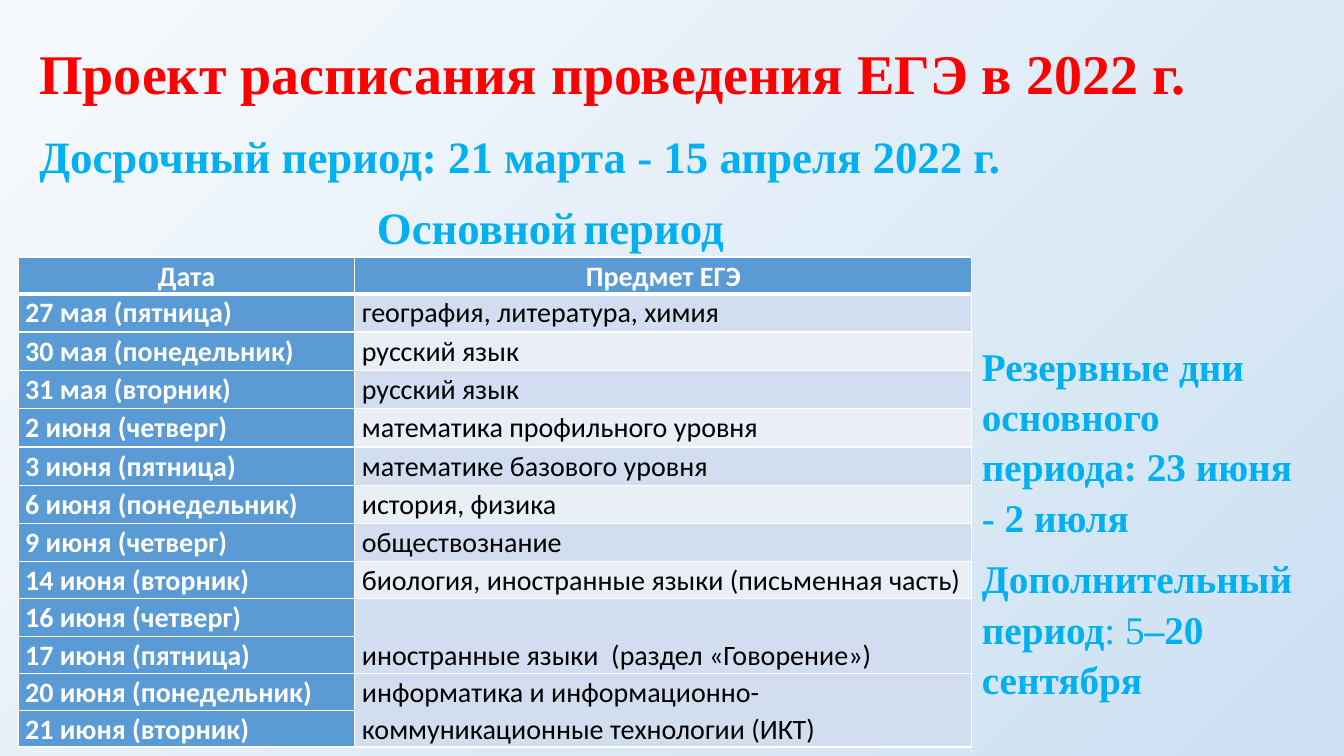
import pptx
import pptx.util
import pptx.dml.color
import pptx.enum.text
import pptx.oxml
import pptx.oxml.ns

Inches, Pt = pptx.util.Inches, pptx.util.Pt
RGB = pptx.dml.color.RGBColor.from_string
ALIGN = pptx.enum.text.PP_ALIGN
ANCHOR = pptx.enum.text.MSO_ANCHOR
SERIF = "Times New Roman"
COLORS = {
    "red": "FF0000", "sky": "00B0F0", "blue": "5B9BD5", "white": "FFFFFF",
    "black": "000000", "band": "D2DEEF", "light": "EAEFF7",
    "top": "F7FAFD", "bottom": "CEE1F2",
}


def write(paragraph, runs, color, layout):
    """Fill a paragraph with (text, size, bold, font) runs and set its layout values."""
    for text, size, bold, font in runs:
        run = paragraph.add_run()
        run.text = text
        for attribute, value in {"size": Pt(size), "bold": bold, "name": font}.items():
            setattr(run.font, attribute, value)
        run.font.color.rgb = RGB(COLORS[color])
    for attribute, value in layout.items():
        setattr(paragraph, attribute, value)


def place(shape, left, top, width, height, anchor=ANCHOR.TOP):
    """Position a text shape and make its text wrap at a fixed size."""
    box = {"left": left, "top": top, "width": width, "height": height}
    for attribute, value in box.items():
        setattr(shape, attribute, Inches(value))
    frame = shape.text_frame
    frame.word_wrap = True
    frame.auto_size = pptx.enum.text.MSO_AUTO_SIZE.NONE
    frame.vertical_anchor = anchor
    return frame


deck = pptx.Presentation()
deck.slide_width, deck.slide_height = Inches(13.33), Inches(7.5)
slide = deck.slides.add_slide(deck.slide_layouts[1])

backdrop = slide.background.fill
backdrop.gradient()
backdrop.gradient_angle = 315
for stop, position, shade in zip(backdrop.gradient_stops, (0, 0.97), ("top", "bottom")):
    stop.position = position
    stop.color.rgb = RGB(COLORS[shade])

# Headings
heading = place(slide.shapes.title, 0.29, 0.21, 11.89, 0.9, ANCHOR.BOTTOM)
write(heading.paragraphs[0], [("Проект расписания проведения ЕГЭ в 2022 г.", 40, True, SERIF)],
      "red", {"alignment": ALIGN.LEFT, "line_spacing": 0.9})

spaced = {"alignment": ALIGN.LEFT, "line_spacing": 1.07, "space_after": Pt(8)}
early_period = place(slide.placeholders[1], 0.29, 1.19, 9.89, 0.94).paragraphs[0]
write(early_period, [("Досрочный период: 21 марта - 15 апреля 2022 г.", 32, True, SERIF)],
      "sky", {**spaced, "space_before": Pt(10)})
bullet = early_period._p.get_or_add_pPr()
bullet.set("marL", "0")
bullet.set("indent", "0")
bullet.append(pptx.oxml.parse_xml(f'<a:buNone {pptx.oxml.ns.nsdecls("a")}/>'))

main_period = place(slide.shapes.add_textbox(0, 0, 0, 0), 3.64, 1.89, 5.2, 0.68)
write(main_period.paragraphs[0],
      [("Основной", 32, True, SERIF), (" ", 18, True, SERIF), ("период", 32, True, SERIF)],
      "sky", spaced)

# Exam timetable: an empty subject continues the cell above
exams = [
    ("Дата", "Предмет ЕГЭ"),
    ("27 мая (пятница)", "география, литература, химия"),
    ("30 мая (понедельник)", "русский язык"),
    ("31 мая (вторник)", "русский язык"),
    ("2 июня (четверг)", "математика профильного уровня"),
    ("3 июня (пятница)", "математике базового уровня"),
    ("6 июня (понедельник)", "история, физика"),
    ("9 июня (четверг)", "обществознание"),
    ("14 июня (вторник)", "биология, иностранные языки (письменная часть)"),
    ("16 июня (четверг)", "иностранные языки  (раздел «Говорение»)"),
    ("17 июня (пятница)", ""),
    ("20 июня (понедельник)", "информатика и информационно-коммуникационные технологии (ИКТ)"),
    ("21 июня (вторник)", ""),
]
short_rows = {0, 8, 10, 11, 12}
timetable = slide.shapes.add_table(
    len(exams), 2, Inches(0.18), Inches(2.55), Inches(9.46), Inches(4.83)).table
for column, width in zip(timetable.columns, (3.34, 6.12)):
    column.width = Inches(width)

for r, exam in enumerate(exams):
    timetable.rows[r].height = Inches(0.36 if r in short_rows else 0.38)
    for c, text in enumerate(exam):
        cell = timetable.cell(r, c)
        margins = {"margin_left": 0.07, "margin_right": 0.07, "margin_top": 0, "margin_bottom": 0}
        for attribute, value in margins.items():
            setattr(cell, attribute, Inches(value))
        for side in "LRTB":
            thick = (r, side) in {(0, "B"), (1, "T")}
            cell._tc.get_or_add_tcPr().append(pptx.oxml.parse_xml(
                f'<a:ln{side} {pptx.oxml.ns.nsdecls("a")} w="{Pt(3 if thick else 1)}"><a:solidFill>'
                f'<a:srgbClr val="{COLORS["white"]}"/></a:solidFill></a:ln{side}>'))
        strong = r == 0 or c == 0
        cell.fill.solid()
        cell.fill.fore_color.rgb = RGB(COLORS["blue" if strong else "band" if r % 2 else "light"])
        if text:
            write(cell.text_frame.paragraphs[0], [(text, 20, strong, "Calibri")],
                  "white" if strong else "black",
                  {"alignment": ALIGN.LEFT if r else ALIGN.CENTER, "line_spacing": 1.07})
        else:
            subject = timetable.cell(r - 1, c)
            subject.merge(cell)
            subject.vertical_anchor = ANCHOR.BOTTOM

# Reserve days and additional period
later_dates = place(slide.shapes.add_textbox(0, 0, 0, 0), 9.64, 3.31, 3.31, 4.18)
write(later_dates.paragraphs[0],
      [("Резервные дни основного периода: 23 июня - 2 июля", 28, True, SERIF)], "sky", spaced)
write(later_dates.add_paragraph(),
      [("Дополнительный период", 28, True, SERIF), (": 5", 28, False, SERIF),
       ("–20 сентября", 28, True, SERIF)], "sky", spaced)

deck.save("out.pptx")
